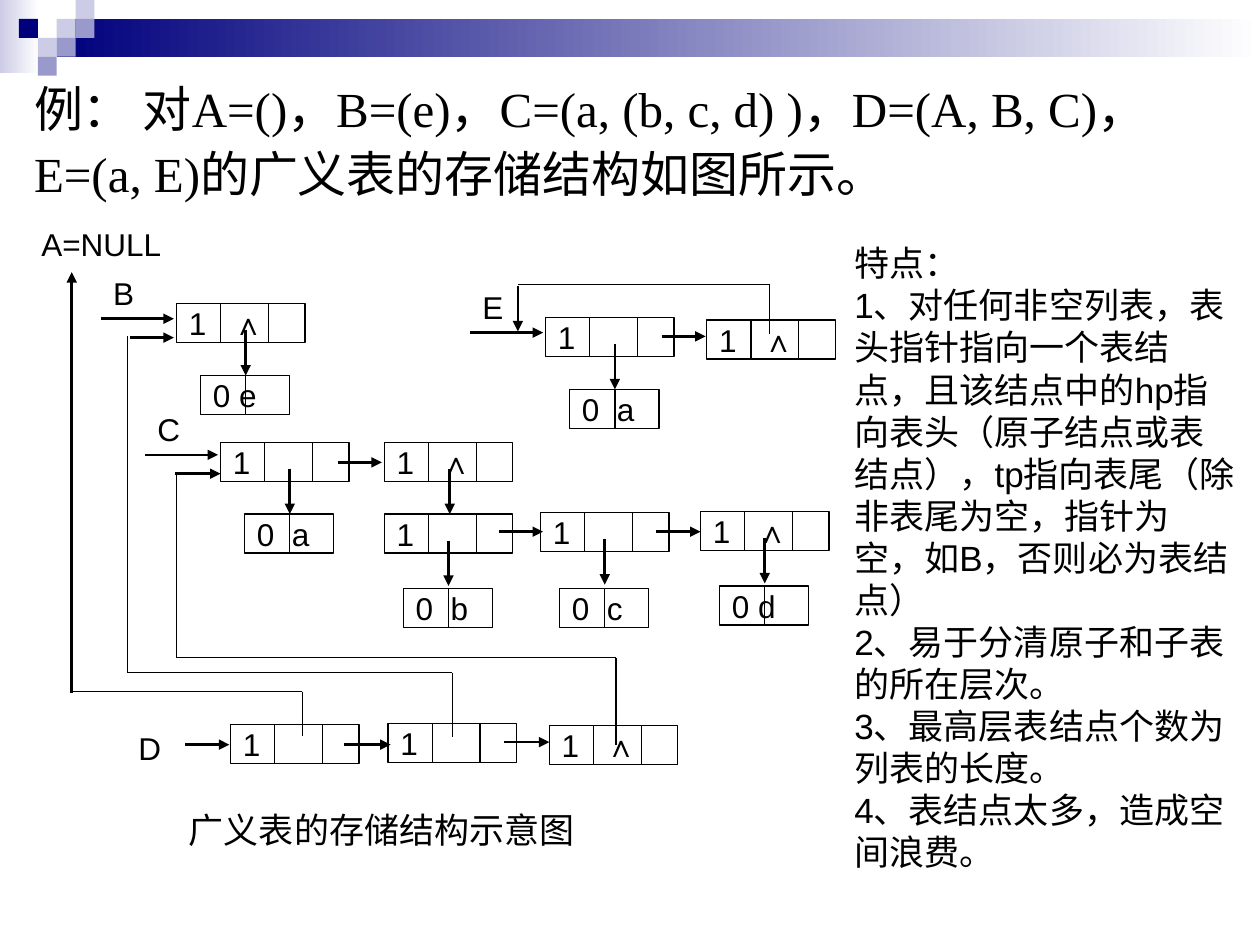
from itertools import pairwise

from lxml.etree import SubElement
from pptx import Presentation
from pptx.dml.color import RGBColor
from pptx.enum.shapes import MSO_CONNECTOR, MSO_SHAPE
from pptx.enum.text import MSO_ANCHOR, MSO_AUTO_SIZE, PP_ALIGN
from pptx.oxml.ns import qn
from pptx.util import Inches, Pt

INK, NAVY, MID, PALE, WHITE = "000000", "00007D", "9999CC", "CCCCE6", "FFFFFF"
CJK = "Noto Sans CJK SC"
NODE_W, ATOM_W, CELL_H = 1.02, 0.71, 0.31


def color(code):
    return RGBColor.from_string(code)


def place(shape, x, y, w, h):
    shape.left, shape.top = Inches(x), Inches(y)
    shape.width, shape.height = Inches(w), Inches(h)


def write(shape, text, size=18, font="Arial", align=PP_ALIGN.LEFT,
          anchor=MSO_ANCHOR.MIDDLE, wrap=True, space=1.0, spread=0):
    frame = shape.text_frame
    frame.auto_size = MSO_AUTO_SIZE.NONE
    frame.word_wrap, frame.vertical_anchor = wrap, anchor
    for i, line in enumerate(text.split("\n")):
        para = frame.paragraphs[0] if i == 0 else frame.add_paragraph()
        para.alignment, para.line_spacing = align, space
        para.space_before = Pt(0)
        props = para._p.get_or_add_pPr()
        for name in ("marL", "indent", "hangingPunct"):
            props.set(name, "0")
        SubElement(props, qn("a:buNone"))
        run = para.add_run()
        run.text = line
        run.font.size, run.font.name = Pt(size), font
        run.font.color.rgb = color(INK)
        look = run._r.get_or_add_rPr()
        SubElement(look, qn("a:ea"), typeface=CJK)
        if spread:
            look.set("spc", str(int(spread * 100)))


def label(slide, text, x, y, w, h, **form):
    box = slide.shapes.add_textbox(Inches(x), Inches(y), Inches(w), Inches(h))
    write(box, text, **form)


def rect(slide, x, y, w, h, fill=None, end=None, line=None):
    shape = slide.shapes.add_shape(
        MSO_SHAPE.RECTANGLE, Inches(x), Inches(y), Inches(w), Inches(h))
    shape.shadow.inherit = False
    if end:
        shape.fill.gradient()
        shape.fill.gradient_angle = 0
        for stop, code in zip(shape.fill.gradient_stops, (fill, end)):
            stop.color.rgb = color(code)
    elif fill:
        shape.fill.solid()
        shape.fill.fore_color.rgb = color(fill)
    else:
        shape.fill.background()
    if line:
        shape.line.color.rgb, shape.line.width = color(line), Pt(0.75)
    else:
        shape.line.fill.background()
    return shape


def link(slide, x1, y1, x2, y2, arrow=False):
    line = slide.shapes.add_connector(
        MSO_CONNECTOR.STRAIGHT, Inches(x1), Inches(y1), Inches(x2), Inches(y2))
    line.line.color.rgb = color(INK)
    line.line.width = Pt(1.5 if arrow else 0.75)
    if arrow:
        SubElement(line.line._get_or_add_ln(), qn("a:tailEnd"), type="triangle")
    SubElement(line._element.spPr, qn("a:effectLst"))


def banner(slide, x, y, w):
    rect(slide, x, y, 0.31, 0.58, PALE, WHITE)
    rect(slide, x + 0.45, y + 0.15, w - 0.45, 0.3, NAVY, WHITE)
    # Mosaic squares by column and row
    for col, row, fill in [(3, 1, PALE), (4, 0, PALE), (4, 1, MID), (2, 2, PALE),
                           (1, 1, NAVY), (3, 2, MID), (2, 3, MID)]:
        rect(slide, x + col * 0.15, y + row * 0.15, 0.15, 0.15, fill)


def cell(slide, text, x, y, w, cuts, spread):
    write(rect(slide, x, y, w, CELL_H, line=INK), text, spread=spread)
    for cut in cuts:
        link(slide, x + cut, y, x + cut, y + CELL_H)


def node(slide, x, y, text, atom=None, dx=0, dy=0, spread=2.5):
    cell(slide, text, x, y, NODE_W, (0.35, 0.73), 5)
    if atom:
        cell(slide, atom, x + dx, y + dy, ATOM_W, (0.36,), spread)
        mid = x + dx + 0.36
        link(slide, mid, y + 0.21, mid, y + 0.57, arrow=True)


def diagram(slide, x, y):
    # List nodes, with their atoms, the atom's offset and letter spread
    for dx, dy, *rest in [
        (1.2, 0.71, "1 ∧", "0 e", 0.19, 0.57, 0),
        (1.55, 1.81, "1", "0 a", 0.19, 0.57),
        (2.85, 1.81, "1 ∧"),
        (2.85, 2.38, "1", "0 b", 0.15, 0.59),
        (4.09, 2.37, "1", "0 c", 0.15, 0.6),
        (5.36, 2.36, "1 ∧", "0 d", 0.15, 0.59, 0),
        (4.13, 0.82, "1", "0 a", 0.19, 0.57),
        (5.41, 0.84, "1 ∧"),
        (1.63, 4.05, "1"), (2.88, 4.04, "1"), (4.16, 4.06, "1 ∧"),
    ]:
        node(slide, x + dx, y + dy, *rest)
    # List names
    for name, dx, dy, w in [("A=NULL", 0.03, 0.04, 1.41), ("B", 0.6, 0.43, 0.39),
                            ("C", 0.95, 1.51, 0.39), ("D", 0.8, 4.04, 0.39),
                            ("E", 3.53, 0.54, 0.39)]:
        label(slide, name, x + dx, y + dy, w, 0.39, wrap=False)
    # Pointers to the right
    for x1, dy, x2 in [(0.6, 0.83, 1.18), (0.83, 0.98, 1.18), (0.95, 1.91, 1.53),
                       (1.19, 2.06, 1.55), (2.48, 1.97, 2.83), (3.76, 2.52, 4.11),
                       (5.01, 2.52, 5.36), (3.53, 0.94, 4.11), (5.05, 0.97, 5.4),
                       (1.27, 4.21, 1.62), (2.53, 4.21, 2.9), (3.8, 4.19, 4.16)]:
        link(slide, x + x1, y + dy, x + x2, y + dy, arrow=True)
    # Pointers up and down
    for dx, y1, y2 in [(0.37, 3.8, 0.46), (3.37, 2.02, 2.38), (3.91, 0.57, 0.93)]:
        link(slide, x + dx, y + y1, x + dx, y + y2, arrow=True)
    # Wires back to shared lists
    for wire in [
        [(0.37, 3.79), (2.2, 3.79), (2.2, 4.14)],
        [(0.81, 0.97), (0.81, 3.64), (3.39, 3.64), (3.39, 4.15)],
        [(1.2, 2.06), (1.2, 3.52), (4.69, 3.52), (4.69, 4.21)],
        [(3.91, 0.56), (5.91, 0.56), (5.91, 0.95)],
    ]:
        for (x1, y1), (x2, y2) in pairwise(wire):
            link(slide, x + x1, y + y1, x + x2, y + y2)
    # Caption
    label(slide, "广义表的存储结构示意图", x + 0.37, y + 4.67, 4.92, 0.42,
          size=20, align=PP_ALIGN.CENTER)


def heading(slide, *box):
    title = slide.shapes.title
    place(title, *box)
    write(title, "例： 对A=()，B=(e)，C=(a, (b, c, d) )，D=(A, B, C)，"
          "E=(a, E)的广义表的存储结构如图所示。", size=28,
          font="Times New Roman", anchor=MSO_ANCHOR.TOP, space=1.1)


def traits(slide, *box):
    body = slide.placeholders[1]
    place(body, *box)
    write(body, "\n".join([
        "特点：",
        "1、对任何非空列表，表头指针指向一个表结点，且该结点中的hp指向表头"
        "（原子结点或表结点），tp指向表尾（除非表尾为空，指针为空，如B，否则必为表结点）",
        "2、易于分清原子和子表的所在层次。",
        "3、最高层表结点个数为列表的长度。",
        "4、表结点太多，造成空间浪费。",
    ]), size=20, anchor=MSO_ANCHOR.TOP)


def main():
    deck = Presentation()
    deck.slide_width, deck.slide_height = Inches(10), Inches(7.5)
    slide = deck.slides.add_slide(deck.slide_layouts[1])
    banner(slide, 0, 0, 10)
    heading(slide, 0.17, 0.53, 9.64, 1.08)
    diagram(slide, 0.2, 1.7)
    traits(slide, 6.68, 1.87, 3.22, 5.15)
    deck.save("out.pptx")


if __name__ == "__main__":
    main()
